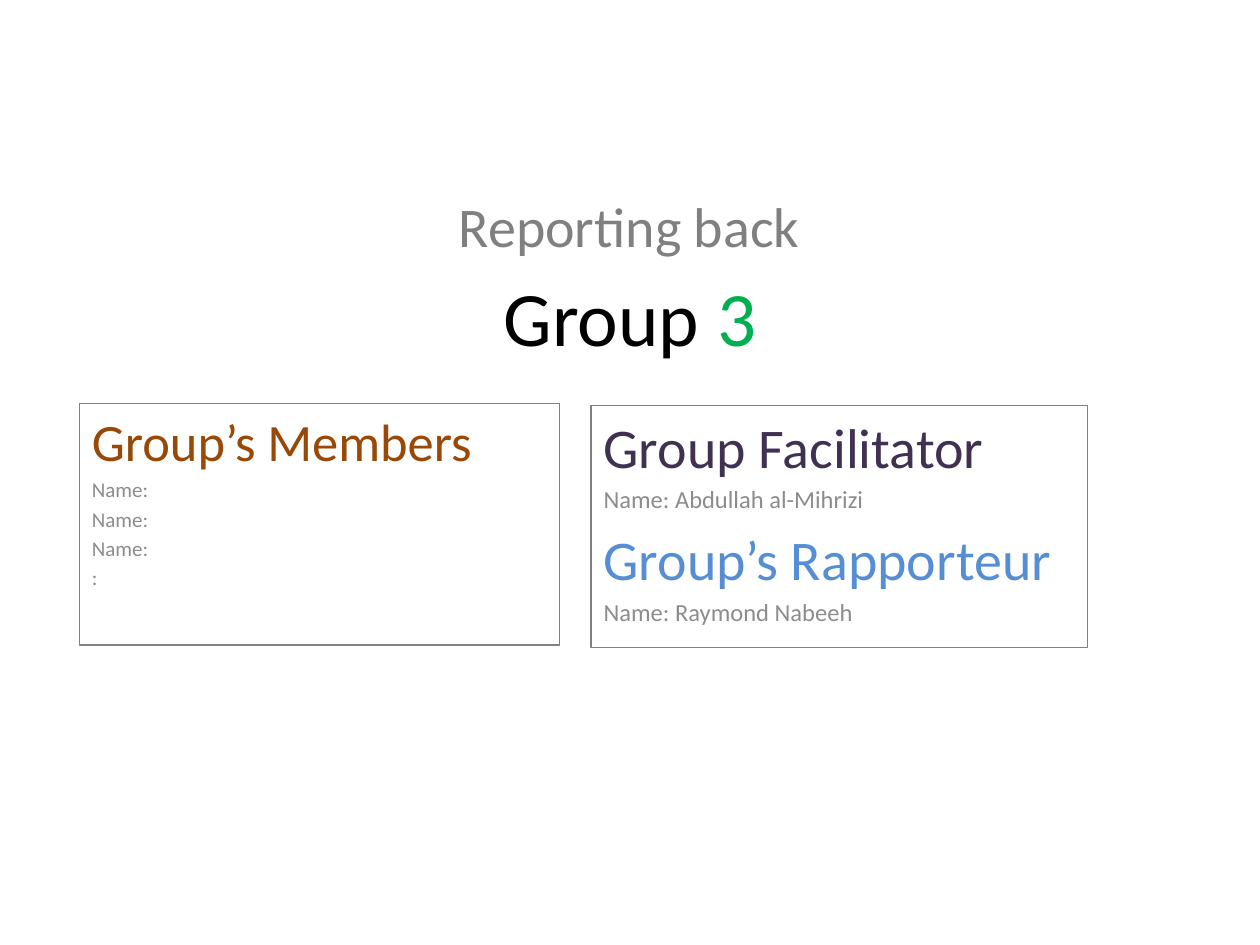
from pptx import Presentation
from pptx.dml.color import RGBColor
from pptx.enum.text import MSO_ANCHOR, MSO_AUTO_SIZE, PP_ALIGN
from pptx.util import Inches, Pt

GRAY = "808080"
NAME_GRAY = "8C8C8C"


def color(value):
    return RGBColor.from_string(value)


def place(box, left, top, width, height, anchor=MSO_ANCHOR.TOP):
    box.left, box.top = Inches(left), Inches(top)
    box.width, box.height = Inches(width), Inches(height)
    frame = box.text_frame
    frame.word_wrap = True
    frame.auto_size = MSO_AUTO_SIZE.NONE
    frame.vertical_anchor = anchor


def outline(box):
    box.line.color.rgb = color(GRAY)
    box.line.width = Pt(0.75)


def add_span(para, text, size=12, fill=NAME_GRAY):
    span = para.add_run()
    span.text = text
    span.font.name = "Calibri"
    span.font.size = Pt(size)
    span.font.color.rgb = color(fill)


def write_lines(box, lines, align=PP_ALIGN.LEFT):
    frame = box.text_frame
    for index, (text, size, fill) in enumerate(lines):
        para = frame.add_paragraph() if index else frame.paragraphs[0]
        para.alignment = align
        para.space_before = Pt(0.2 * size if index else 0)
        add_span(para, text, size=size, fill=fill)


def add_text_box(slide, left, top, width, height):
    box = slide.shapes.add_textbox(0, 0, 0, 0)
    place(box, left, top, width, height)
    return box


def main():
    deck = Presentation()
    deck.slide_width, deck.slide_height = Inches(10), Inches(7.5)
    slide = deck.slides.add_slide(deck.slide_layouts[0])

    title = slide.shapes.title
    place(title, 0.75, 1.86, 8.5, 1.29, anchor=MSO_ANCHOR.MIDDLE)
    heading = title.text_frame.paragraphs[0]
    heading.alignment = PP_ALIGN.CENTER
    add_span(heading, "Group ", size=44, fill="000000")
    add_span(heading, "3", size=44, fill="00B050")

    roles = slide.placeholders[1]
    place(roles, 4.69, 3.22, 3.94, 1.92)
    outline(roles)
    write_lines(roles, [
        ("Group Facilitator", 32, "403152"),
        ("Name: Abdullah al-Mihrizi", 14, NAME_GRAY),
        ("Group’s Rapporteur", 32, "558ED5"),
        ("Name: Raymond Nabeeh", 14, NAME_GRAY),
    ])

    members = add_text_box(slide, 0.63, 3.2, 3.81, 1.92)
    outline(members)
    names = [(text, 12, NAME_GRAY) for text in ["Name:"] * 3 + [":"]]
    write_lines(members, [("Group’s Members", 30, "984807")] + names)

    banner = add_text_box(slide, 1.06, 1.47, 7.87, 0.87)
    write_lines(banner, [("Reporting back", 32, GRAY)], align=PP_ALIGN.CENTER)

    deck.save("out.pptx")


if __name__ == "__main__":
    main()
